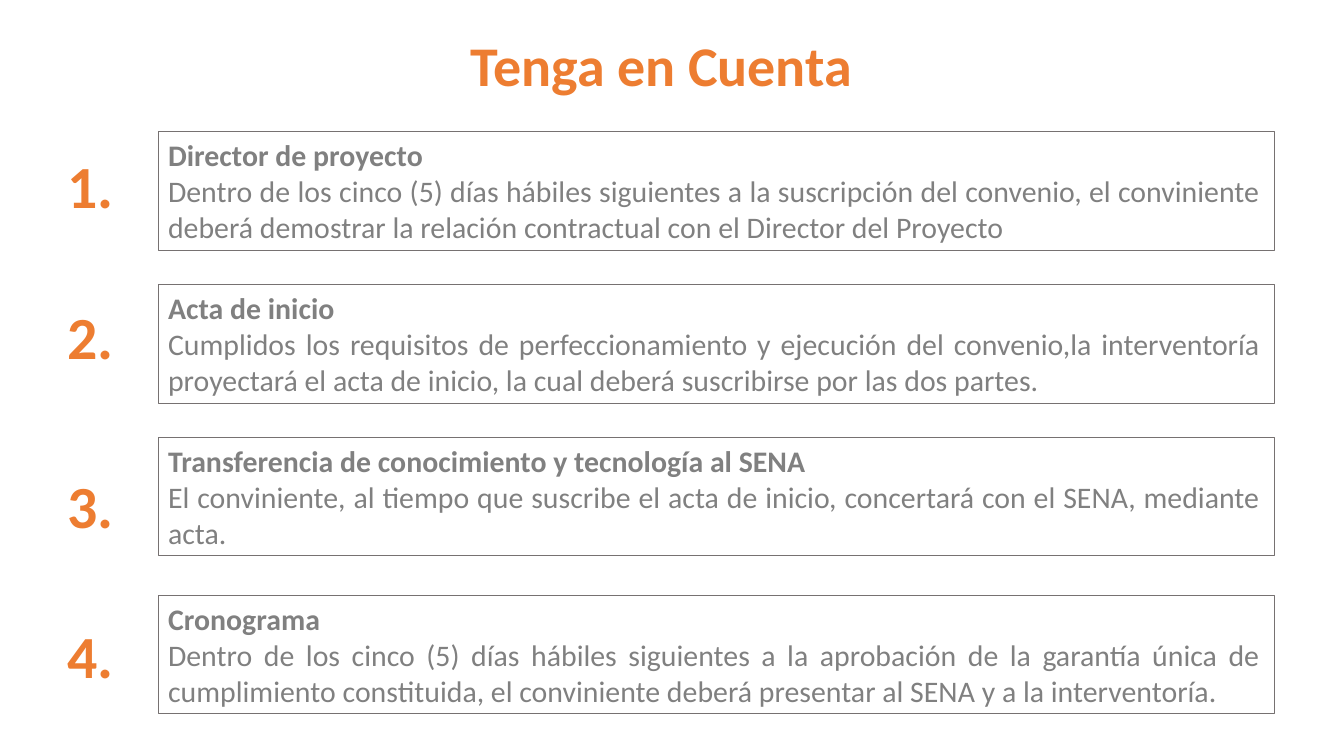
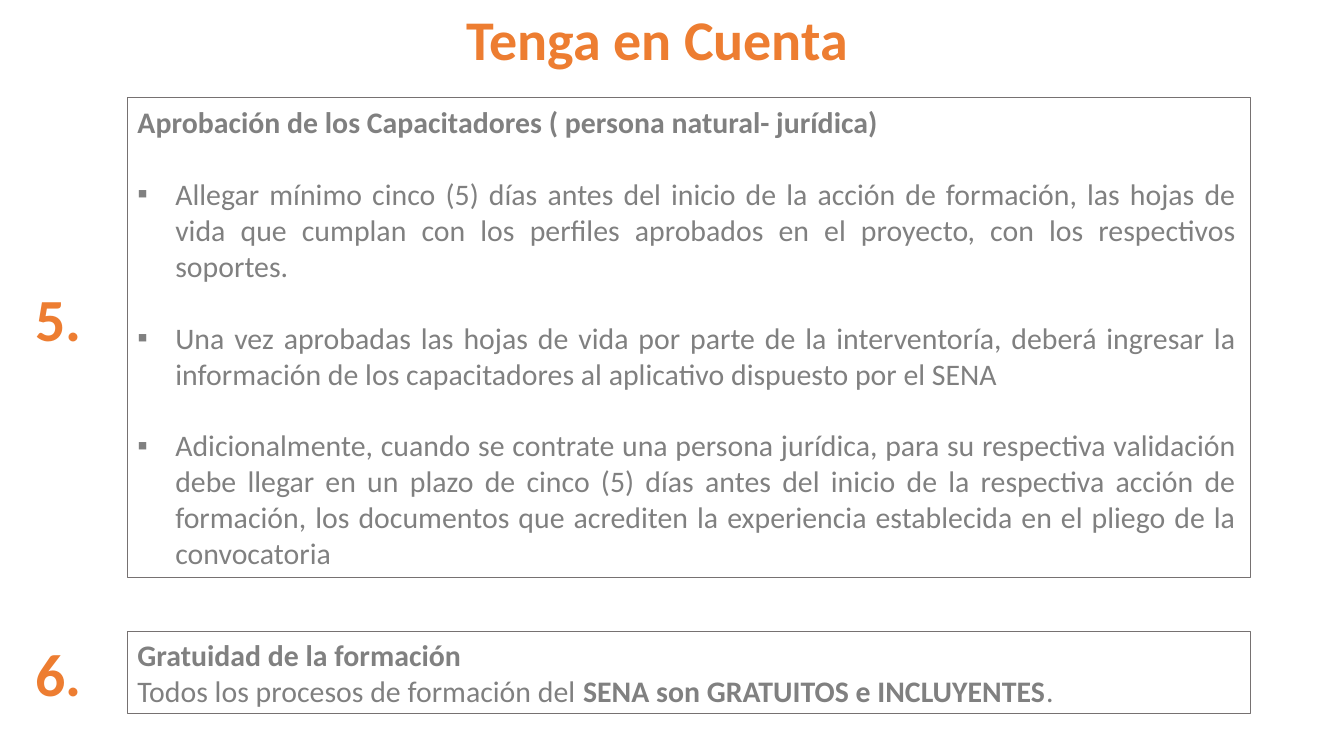
from lxml.etree import SubElement
from pptx import Presentation
from pptx.dml.color import RGBColor
from pptx.enum.shapes import MSO_SHAPE
from pptx.enum.text import MSO_ANCHOR, MSO_AUTO_SIZE, PP_ALIGN
from pptx.oxml.ns import qn
from pptx.util import Pt

FONT = "Calibri"
ORANGE, GREY, EDGE = "ED7D31", "808080", "767171"
BODY, GAP, INDENT = 21.33, 25.7, 27


def color(code):
    return RGBColor.from_string(code)


def write(para, text, size, tone, bold=True):
    run = para.add_run()
    run.text = text
    font = run.font
    font.name, font.size, font.bold = FONT, Pt(size), bold
    font.color.rgb = color(tone)


def place(shape, left, top, width, height):
    shape.left, shape.top = Pt(left), Pt(top)
    shape.width, shape.height = Pt(width), Pt(height)


def frame(shape, wrap=True, anchor=MSO_ANCHOR.TOP):
    text = shape.text_frame
    text.auto_size = MSO_AUTO_SIZE.NONE
    text.word_wrap = wrap
    text.vertical_anchor = anchor
    return text


def mark(para, bullet):
    props = para._p.get_or_add_pPr()
    inset = Pt(INDENT) if bullet else 0
    props.set("marL", str(inset))
    props.set("indent", str(-inset))
    if bullet:
        SubElement(props, qn("a:buFont")).set("typeface", "Arial")
        SubElement(props, qn("a:buChar")).set("char", "▪")
    else:
        SubElement(props, qn("a:buNone"))


def title(slide, left, top):
    shape = slide.shapes.title
    place(shape, left, top, 290, 54)
    para = frame(shape, False, MSO_ANCHOR.MIDDLE).paragraphs[0]
    para.alignment = PP_ALIGN.CENTER
    write(para, "Tenga en Cuenta", 40, ORANGE)


def number(slide, label, left, top):
    shape = slide.shapes.add_textbox(0, 0, 0, 0)
    place(shape, left, top, 56, 59)
    write(frame(shape).paragraphs[0], label, 42.67, ORANGE)


def panel(shape, box, head, lines, bullet=False):
    place(shape, *box)
    shape.fill.background()
    shape.line.color.rgb = color(EDGE)
    shape.line.width = Pt(0.75)
    text = frame(shape, anchor=MSO_ANCHOR.MIDDLE)
    text.margin_right = Pt(9)
    rows = [[(head, True)]] + lines
    for i, runs in enumerate(rows):
        para = text.add_paragraph() if i else text.paragraphs[0]
        listed = bullet and i > 0
        mark(para, listed)
        para.alignment = PP_ALIGN.JUSTIFY
        para.space_before = Pt(GAP if listed else 0)
        for words, bold in runs:
            write(para, words, BODY, GREY, bold)


def card(slide, box, head, lines):
    shape = slide.shapes.add_shape(MSO_SHAPE.RECTANGLE, 0, 0, 0, 0)
    shape.shadow.inherit = False
    panel(shape, box, head, lines)


def steps(deck):
    slide = deck.slides.add_slide(deck.slide_layouts[5])
    title(slide, 327.4, 18.7)
    items = [
        (94, 103, "Director de proyecto",
         "Dentro de los cinco (5) días hábiles siguientes a la suscripción del convenio, "
         "el conviniente deberá demostrar la relación contractual con el Director del Proyecto"),
        (203.3, 210.6, "Acta de inicio",
         "Cumplidos los requisitos de perfeccionamiento y ejecución del convenio,la interventoría "
         "proyectará el acta de inicio, la cual deberá suscribirse por las dos partes."),
        (312.3, 331.2, "Transferencia de conocimiento y tecnología al SENA",
         "El conviniente, al tiempo que suscribe el acta de inicio, concertará con el SENA, "
         "mediante acta."),
        (425.2, 438.3, "Cronograma",
         "Dentro de los cinco (5) días hábiles siguientes a la aprobación de la garantía única de "
         "cumplimiento constituida, el conviniente deberá presentar al SENA y a la interventoría."),
    ]
    for i, (top, mid, head, words) in enumerate(items, 1):
        number(slide, f"{i}.", 41.3, mid)
        card(slide, (113, top, 797.5, 84.7), head, [[(words, False)]])


def rules(deck):
    slide = deck.slides.add_slide(deck.slide_layouts[1])
    title(slide, 324.6, 0)
    points = [
        "Allegar mínimo cinco (5) días antes del inicio de la acción de formación, las hojas de "
        "vida que cumplan con los perfiles aprobados en el proyecto, con los respectivos soportes.",
        "Una vez aprobadas las hojas de vida por parte de la interventoría, deberá ingresar la "
        "información de los capacitadores al aplicativo dispuesto por el SENA",
        "Adicionalmente, cuando se contrate una persona jurídica, para su respectiva validación "
        "debe llegar en un plazo de cinco (5) días antes del inicio de la respectiva acción de "
        "formación, los documentos que acrediten la experiencia establecida en el pliego de la "
        "convocatoria",
    ]
    number(slide, "5.", 18, 198)
    panel(slide.placeholders[1], (91, 69.4, 802.3, 343),
          "Aprobación de los Capacitadores ( persona natural- jurídica)",
          [[(words, False)] for words in points], True)
    number(slide, "6.", 18, 451.4)
    card(slide, (91, 451, 802.3, 59), "Gratuidad de la formación", [[
        ("Todos los procesos de formación del ", False),
        ("SENA son GRATUITOS e INCLUYENTES", True),
        (".", False),
    ]])


def main():
    deck = Presentation()
    deck.slide_width, deck.slide_height = Pt(960), Pt(540)
    steps(deck)
    rules(deck)
    deck.save("out.pptx")


if __name__ == "__main__":
    main()
